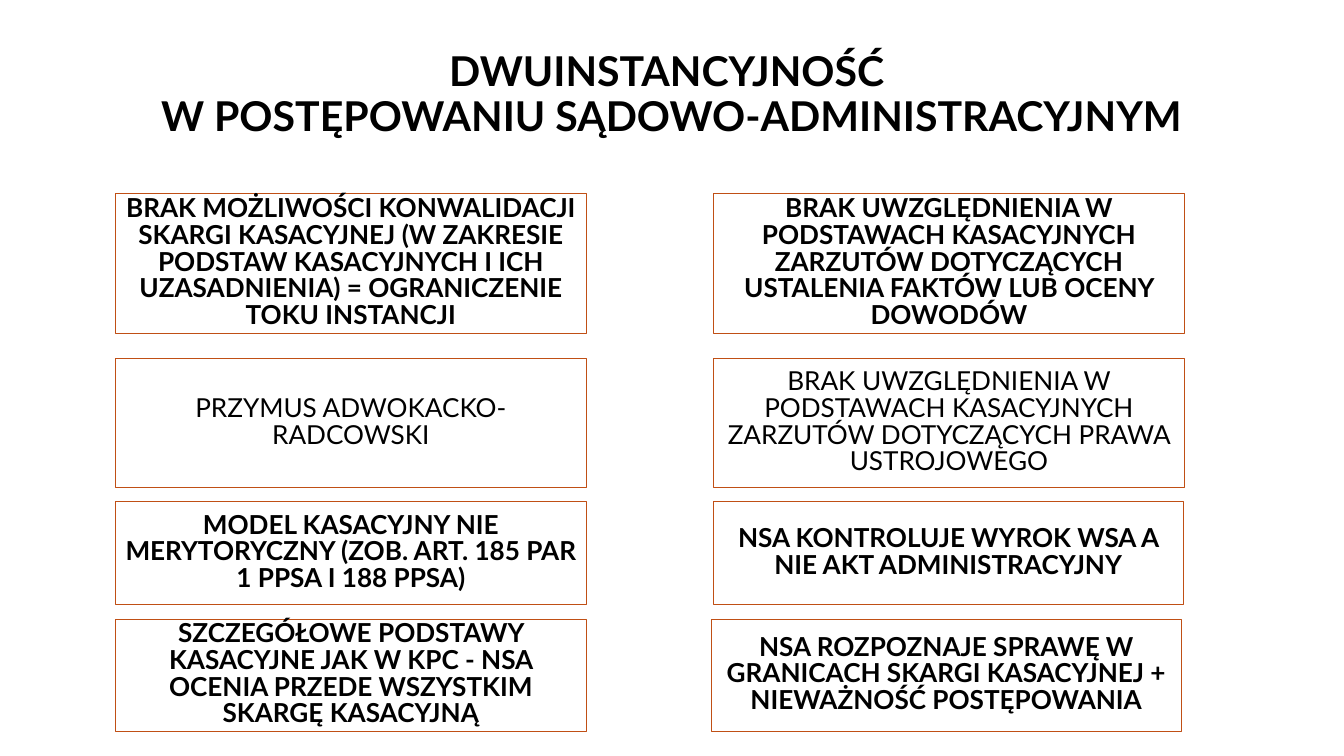
from dataclasses import dataclass

from pptx import Presentation
from pptx.dml.color import RGBColor
from pptx.enum.shapes import MSO_SHAPE as Shape
from pptx.enum.text import MSO_ANCHOR as Anchor, PP_ALIGN as Align
from pptx.util import Inches, Pt


@dataclass(frozen=True)
class Theme:
    font: str = "Lato"
    ink: RGBColor = RGBColor(0x00, 0x00, 0x00)
    outline: RGBColor = RGBColor(0xC0, 0x4F, 0x15)
    outline_width: float = 0.75
    title_size: int = 44
    body_size: int = 28


THEME = Theme()

TITLE = ["DWUINSTANCYJNOŚĆ ", "W POSTĘPOWANIU SĄDOWO-ADMINISTRACYJNYM"]

LEFT_X, CARD_WIDTH = 1.72, 7

# Each row: top, height, left edge of the right card, bold, left text, right text
ROWS = [
    (2.87, 2.09, 10.62, True,
     "BRAK MOŻLIWOŚCI KONWALIDACJI SKARGI KASACYJNEJ (W ZAKRESIE PODSTAW "
     "KASACYJNYCH I ICH UZASADNIENIA) = OGRANICZENIE TOKU INSTANCJI",
     "BRAK UWZGLĘDNIENIA W PODSTAWACH KASACYJNYCH ZARZUTÓW DOTYCZĄCYCH "
     "USTALENIA FAKTÓW LUB OCENY DOWODÓW"),
    (5.33, 1.92, 10.62, False,
     "PRZYMUS ADWOKACKO-RADCOWSKI",
     "BRAK UWZGLĘDNIENIA W PODSTAWACH KASACYJNYCH ZARZUTÓW DOTYCZĄCYCH "
     "PRAWA USTROJOWEGO"),
    (7.46, 1.53, 10.61, True,
     "MODEL KASACYJNY NIE MERYTORYCZNY (ZOB. ART. 185 PAR 1 PPSA I 188 PPSA)",
     "NSA KONTROLUJE WYROK WSA A NIE AKT ADMINISTRACYJNY"),
    (9.21, 1.67, 10.58, True,
     "SZCZEGÓŁOWE PODSTAWY KASACYJNE JAK W KPC - NSA OCENIA PRZEDE WSZYSTKIM "
     "SKARGĘ KASACYJNĄ",
     "NSA ROZPOZNAJE SPRAWĘ W GRANICACH SKARGI KASACYJNEJ + NIEWAŻNOŚĆ "
     "POSTĘPOWANIA"),
]


def write_centred(frame, lines, size, bold, line_spacing, space_before=0):
    frame.word_wrap = True
    frame.vertical_anchor = Anchor.MIDDLE
    paragraph = frame.paragraphs[0]
    paragraph.alignment = Align.CENTER
    paragraph.line_spacing = line_spacing
    paragraph.space_before = Pt(space_before)
    for index, line in enumerate(lines):
        if index:
            paragraph.add_line_break()
        run = paragraph.add_run()
        run.text = line
        run.font.name = THEME.font
        run.font.size = Pt(size)
        run.font.bold = bold
        run.font.color.rgb = THEME.ink


def add_title(slide, box):
    heading = slide.shapes.add_textbox(*map(Inches, box))
    write_centred(heading.text_frame, TITLE, THEME.title_size, True, 0.9)


def add_card(slide, box, text, bold):
    card = slide.shapes.add_shape(Shape.RECTANGLE, *map(Inches, box))
    card.shadow.inherit = False
    card.fill.background()
    card.line.color.rgb = THEME.outline
    card.line.width = Pt(THEME.outline_width)
    write_centred(card.text_frame, [text], THEME.body_size, bold, 0.85, 15)


def add_row(slide, row):
    top, height, right_x, bold, left_text, right_text = row
    for x, text in ((LEFT_X, left_text), (right_x, right_text)):
        add_card(slide, (x, top, CARD_WIDTH, height), text, bold)


def main():
    deck = Presentation()
    deck.slide_width, deck.slide_height = Inches(20), Inches(11.25)
    slide = deck.slides.add_slide(deck.slide_layouts[6])

    # Heading
    add_title(slide, (1.5, 0.38, 17, 2.09))

    # Two columns of cards
    for row in ROWS:
        add_row(slide, row)

    deck.save("out.pptx")


if __name__ == "__main__":
    main()
